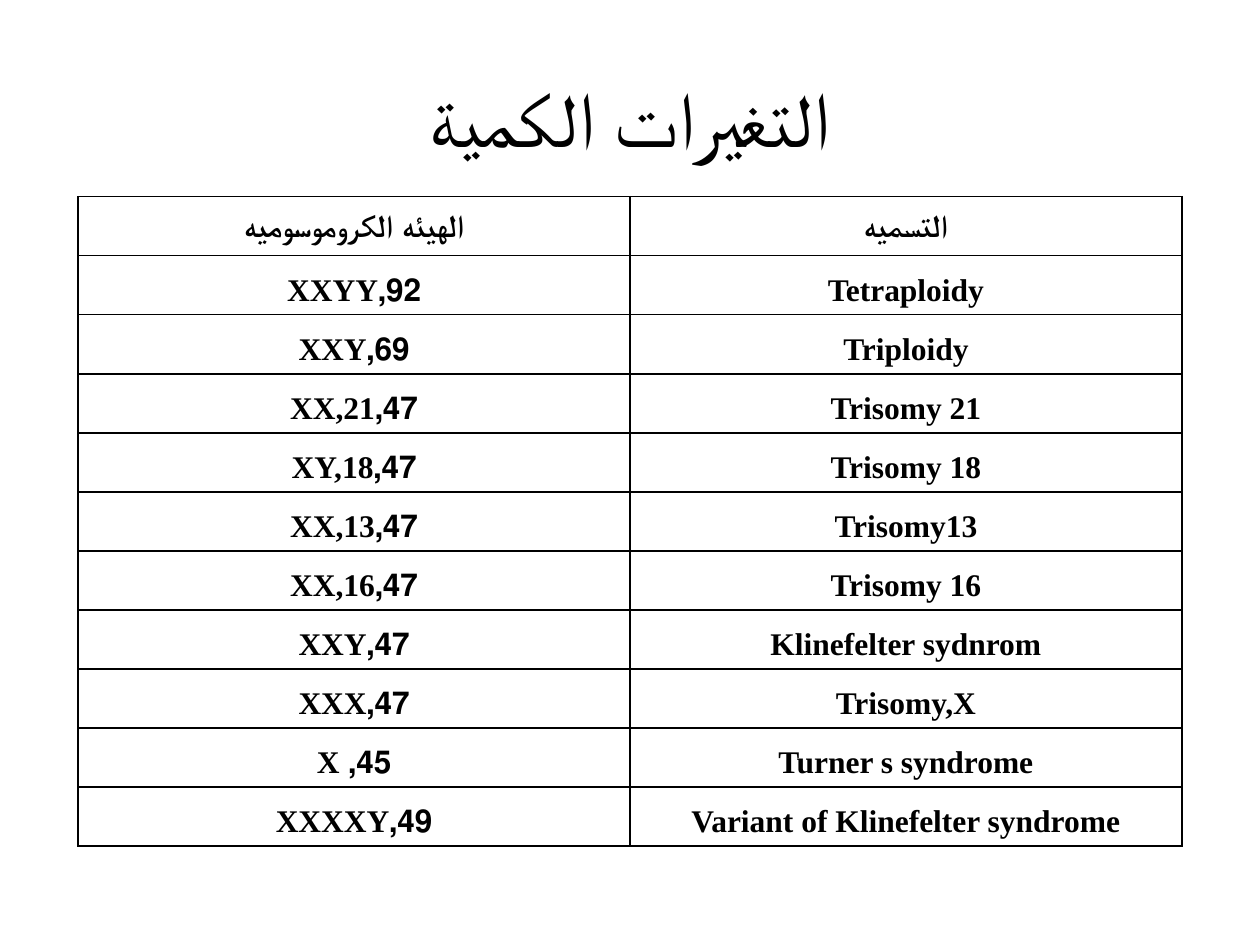
from typing import NamedTuple

import pptx
import pptx.dml.color
import pptx.enum.text
import pptx.oxml
import pptx.oxml.ns
import pptx.util

Pt = pptx.util.Pt
BLACK = pptx.dml.color.RGBColor(0, 0, 0)
WHITE = pptx.dml.color.RGBColor(255, 255, 255)
CENTER = pptx.enum.text.PP_ALIGN.CENTER
MIDDLE = pptx.enum.text.MSO_ANCHOR.MIDDLE

LEFT, TOP = 44.64, 112.4
COL, ROW = 315.36, 33.75
TITLE = "التغيرات الكمية"
TITLE_FONT = {"name": "Calibri", "size": Pt(44)}
HEAD_FONT = {"name": "Calibri", "size": Pt(18), "bold": True}
BODY_FONT = HEAD_FONT | {"name": "Times New Roman"}
CELL = {"margin_left": Pt(5), "margin_right": Pt(5),
        "margin_top": Pt(0), "margin_bottom": Pt(0)}


class Entry(NamedTuple):
    form: str
    name: str


HEAD = Entry("الهيئه الكروموسوميه", "التسميه")
BODY = [
    Entry("92,XXYY", "Tetraploidy"),
    Entry("69,XXY", "Triploidy"),
    Entry("47,XX,21", "Trisomy 21"),
    Entry("47,XY,18", "Trisomy 18"),
    Entry("47,XX,13", "Trisomy13"),
    Entry("47,XX,16", "Trisomy 16"),
    Entry("47,XXY", "Klinefelter sydnrom"),
    Entry("47,XXX", "Trisomy,X"),
    Entry("45, X", "Turner s syndrome"),
    Entry("49,XXXXY", "Variant of Klinefelter syndrome"),
]


def apply(item, values: dict) -> None:
    for key, value in values.items():
        setattr(item, key, value)


def write(frame, text: str, font: dict, space: float = 1) -> None:
    """Fill a text frame with one centred right-to-left line."""
    line = frame.paragraphs[0]
    apply(line, {"alignment": CENTER, "line_spacing": space})
    line._p.get_or_add_pPr().set("rtl", "1")
    run = line.add_run()
    run.text = text
    apply(run.font, font)
    run.font.color.rgb = BLACK


def border(cell) -> None:
    """Put a thin black line on all four sides of a cell."""
    props = cell._tc.get_or_add_tcPr()
    space = pptx.oxml.ns.nsdecls("a")
    for spot, side in enumerate("LRTB"):
        props.insert(spot, pptx.oxml.parse_xml(
            f'<a:ln{side} {space} w="{Pt(1)}"><a:solidFill>'
            f'<a:srgbClr val="{BLACK}"/></a:solidFill></a:ln{side}>'))


def add_title(slide) -> None:
    box = slide.shapes.add_textbox(Pt(36), Pt(21.6), Pt(648), Pt(90))
    apply(box.text_frame, {"word_wrap": True, "vertical_anchor": MIDDLE})
    write(box.text_frame, TITLE, TITLE_FONT)


def add_grid(slide) -> None:
    rows = [HEAD, *BODY]
    count, wide = len(rows), len(HEAD)
    table = slide.shapes.add_table(count, wide, Pt(LEFT), Pt(TOP),
                                   Pt(wide * COL), Pt(count * ROW)).table
    apply(table, {"first_row": False, "horz_banding": False})
    for col in table.columns:
        col.width = Pt(COL)
    for row, entry in zip(table.rows, rows):
        row.height = Pt(ROW)
        font = HEAD_FONT if entry is HEAD else BODY_FONT
        for cell, text in zip(row.cells, entry):
            apply(cell, CELL)
            cell.fill.solid()
            cell.fill.fore_color.rgb = WHITE
            border(cell)
            write(cell.text_frame, text, font, 1.5)


def main() -> None:
    deck = pptx.Presentation()
    apply(deck, {"slide_width": Pt(720), "slide_height": Pt(540)})
    slide = deck.slides.add_slide(deck.slide_layouts[6])
    add_title(slide)
    add_grid(slide)
    deck.save("out.pptx")


if __name__ == "__main__":
    main()
